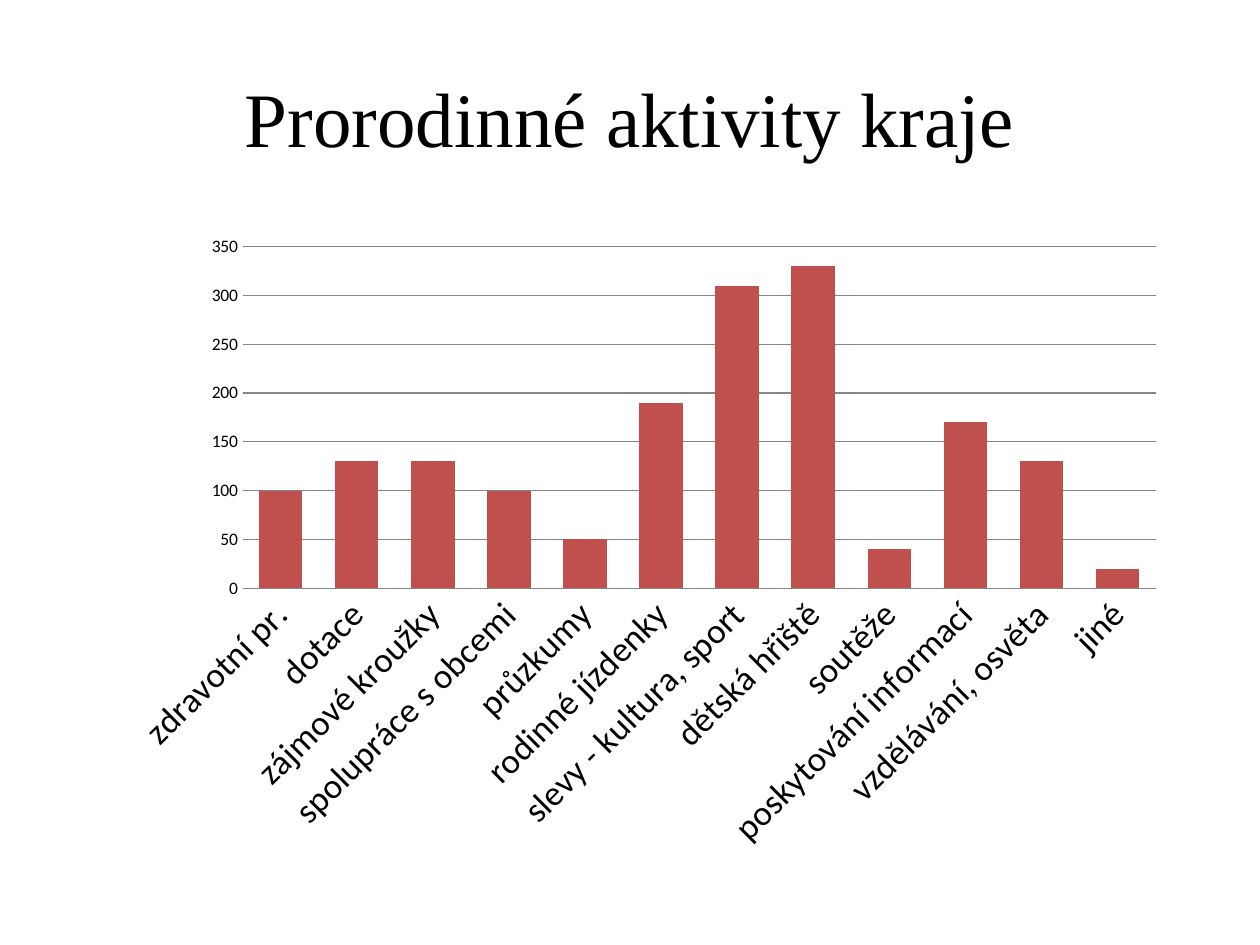
from pptx import Presentation
from pptx.chart.data import CategoryChartData
from pptx.dml.color import RGBColor
from pptx.enum.chart import XL_CHART_TYPE, XL_TICK_MARK
from pptx.enum.text import MSO_ANCHOR, PP_ALIGN
from pptx.util import Pt

DATA = {
    "zdravotní pr.": 100,
    "dotace": 130,
    "zájmové kroužky": 130,
    "spolupráce s obcemi": 100,
    "průzkumy": 50,
    "rodinné jízdenky": 190,
    "slevy - kultura, sport": 310,
    "dětská hřiště": 330,
    "soutěže": 40,
    "poskytování informací": 170,
    "vzdělávání, osvěta": 130,
    "jiné": 20,
}


def color(code):
    return RGBColor.from_string(code)


def style(font, face="Calibri", size=10, ink="000000"):
    font.name = face
    font.size = Pt(size)
    font.bold = False
    font.color.rgb = color(ink)


def write(frame, text, align=PP_ALIGN.CENTER, **form):
    para = frame.paragraphs[0]
    para.alignment = align
    run = para.add_run()
    run.text = text
    style(run.font, **form)


class Deck:
    bar = "C0504D"
    grid = "868686"

    def __init__(self, wide, high):
        self.file = Presentation()
        self.file.slide_width, self.file.slide_height = Pt(wide), Pt(high)
        self.slide = self.file.slides.add_slide(self.file.slide_layouts[6])

    def title(self, text, *box):
        frame = self.slide.shapes.add_textbox(*map(Pt, box)).text_frame
        frame.word_wrap = True
        frame.vertical_anchor = MSO_ANCHOR.MIDDLE
        write(frame, text, face="Times New Roman", size=44)

    def rule(self, line):
        line.color.rgb = color(self.grid)
        line.width = Pt(0.75)

    def chart(self, data, *box):
        table = CategoryChartData()
        table.categories = list(data)
        table.add_series("Series 1", list(data.values()))
        chart = self.slide.shapes.add_chart(
            XL_CHART_TYPE.COLUMN_CLUSTERED, *map(Pt, box), table).chart
        chart.has_legend = chart.has_title = False
        style(chart.font)

        # Bars
        plot = chart.plots[0]
        plot.gap_width, plot.overlap = 75, -25
        plot.vary_by_categories = False
        fill = plot.series[0].format.fill
        fill.solid()
        fill.fore_color.rgb = color(self.bar)

        # Axes, with slanted category labels
        cat, val = chart.category_axis, chart.value_axis
        for axis in (cat, val):
            axis.major_tick_mark = axis.minor_tick_mark = XL_TICK_MARK.NONE
        style(cat.tick_labels.font, size=20)
        cat._element.txPr.bodyPr.set("rot", str(-45 * 60000))
        self.rule(cat.format.line)
        val.minimum_scale, val.maximum_scale, val.major_unit = 0, 350, 50
        val.format.line.fill.background()
        val.has_major_gridlines = True
        self.rule(val.major_gridlines.format.line)


def main():
    deck = Deck(720, 540)
    deck.title("Prorodinné aktivity kraje", 36, 21.6, 648, 90)
    deck.chart(DATA, 65.5, 128, 607, 364.5)
    deck.file.save("out.pptx")


if __name__ == "__main__":
    main()
